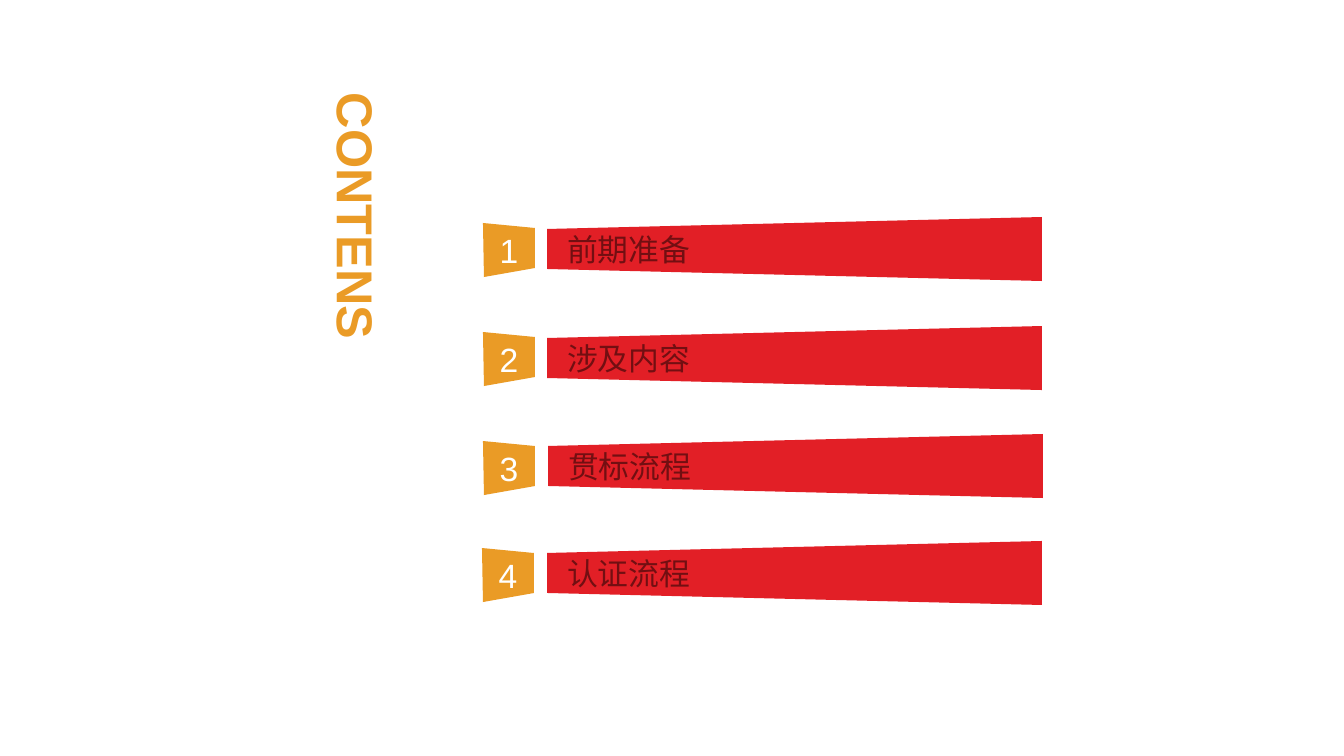
from pptx import Presentation
from pptx.dml.color import RGBColor
from pptx.enum.text import MSO_ANCHOR, MSO_AUTO_SIZE, PP_ALIGN
from pptx.util import Emu, Pt

SCALE = 914400 / 100.8
COLORS = {"orange": "EA9B26", "red": "E21F26", "maroon": "720F12", "white": "FFFFFF"}
BADGE_OUTLINE = [(0, 0), (52, 5), (52, 45), (1, 54)]
BAR_OUTLINE = [(495, 0), (495, 64), (0, 52), (0, 12)]
CHAPTERS = [
    ("前期准备", (483, 223), (547, 217)),
    ("涉及内容", (483, 332), (547, 326)),
    ("贯标流程", (483, 441), (548, 434)),
    ("认证流程", (482, 548), (547, 541)),
]


def px(length):
    return Emu(round(length * SCALE))


def color(name):
    return RGBColor.from_string(COLORS[name])


def write_text(box, text, size, ink, bold=False, align=PP_ALIGN.LEFT, margins=(0, 0, 0, 0)):
    frame = box.text_frame
    frame.word_wrap = True
    frame.auto_size = MSO_AUTO_SIZE.NONE
    frame.vertical_anchor = MSO_ANCHOR.MIDDLE
    frame.margin_left, frame.margin_top, frame.margin_right, frame.margin_bottom = map(px, margins)
    para = frame.paragraphs[0]
    para.alignment = align
    span = para.add_run()
    span.text = text
    span.font.name = "Arial"
    span.font.size = Pt(size)
    span.font.bold = bold
    span.font.color.rgb = color(ink)


def add_panel(page, outline, corner, fill):
    left, top = corner
    points = [(left + x, top + y) for x, y in outline]
    builder = page.shapes.build_freeform(*points[0], scale=SCALE)
    builder.add_line_segments(points[1:], close=True)
    panel = builder.convert_to_shape()
    panel.shadow.inherit = False
    panel.fill.solid()
    panel.fill.fore_color.rgb = color(fill)
    panel.line.fill.background()
    return panel


def add_chapter(page, number, name, badge_corner, bar_corner):
    badge = add_panel(page, BADGE_OUTLINE, badge_corner, "orange")
    write_text(badge, str(number), size=24, ink="white", align=PP_ALIGN.CENTER)
    bar = add_panel(page, BAR_OUTLINE, bar_corner, "red")
    write_text(bar, name, size=22, ink="maroon", margins=(20, 0, 4, 0))


def set_vertical_title(page, text):
    title = page.shapes.title
    title.left, title.top, title.width, title.height = map(px, (316, 88, 82, 297))
    write_text(title, text, size=36, ink="orange", bold=True, margins=(10, 5, 10, 5))
    title.text_frame._txBody.bodyPr.set("vert", "eaVert")


def main():
    deck = Presentation()
    deck.slide_width, deck.slide_height = px(1344), px(756)
    page = deck.slides.add_slide(deck.slide_layouts[5])
    set_vertical_title(page, "CONTENS")
    for number, (name, badge_corner, bar_corner) in enumerate(CHAPTERS, start=1):
        add_chapter(page, number, name, badge_corner, bar_corner)
    deck.save("out.pptx")


if __name__ == "__main__":
    main()
